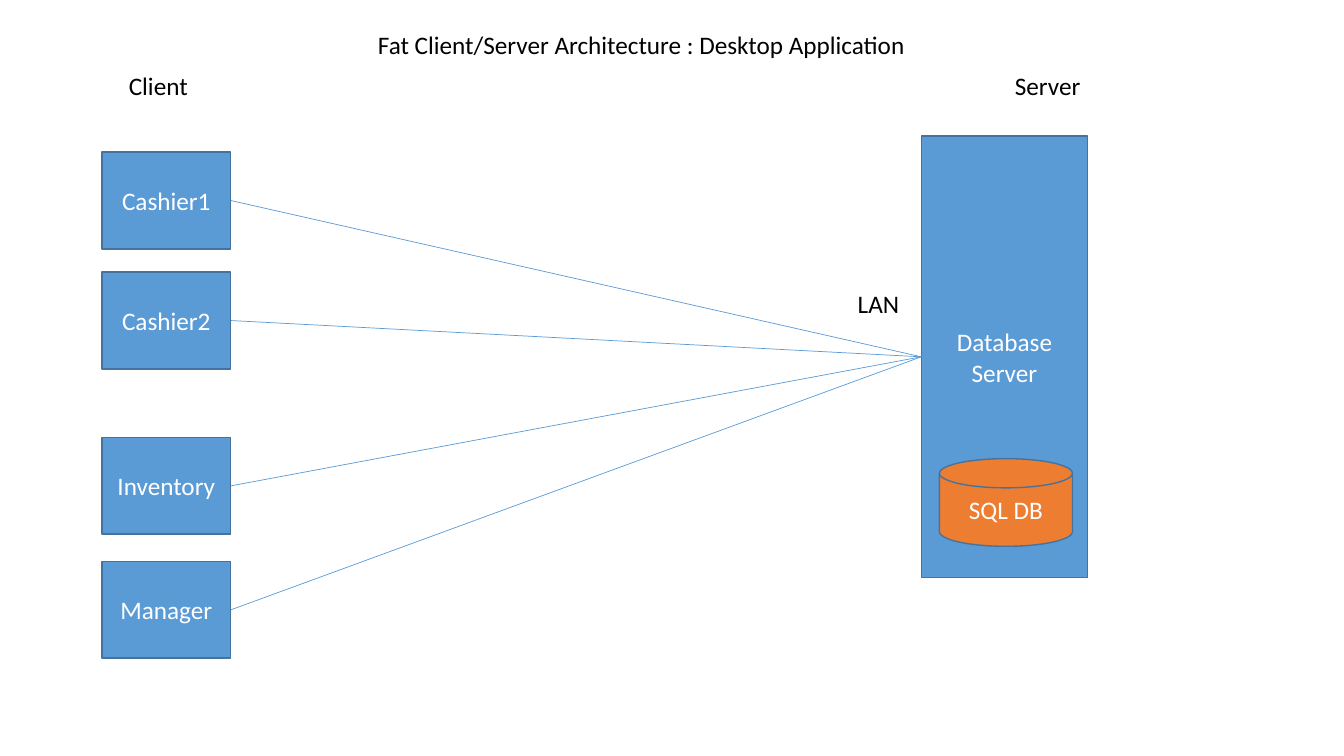
from dataclasses import dataclass

from pptx import Presentation
from pptx import util as u
from pptx.dml.color import RGBColor
from pptx.enum import shapes, text
from pptx.oxml.ns import qn
from lxml import etree


@dataclass(frozen=True)
class Theme:
    font: str = "Calibri"
    size: float = 18
    blue: str = "5B9BD5"
    orange: str = "ED7D31"
    outline: str = "43739E"
    light: str = "FFFFFF"
    dark: str = "000000"
    outline_width: float = 1
    cable_width: float = 0.5


@dataclass(frozen=True)
class Area:
    """Left, top, width and height in percent of the slide's size."""
    left: float
    top: float
    width: float
    height: float


@dataclass(frozen=True)
class Node:
    caption: str
    area: Area
    fill: str
    kind: shapes.MSO_SHAPE = shapes.MSO_SHAPE.RECTANGLE


@dataclass(frozen=True)
class Label:
    caption: str
    area: Area


THEME = Theme()
SLIDE_WIDTH, SLIDE_HEIGHT = u.Inches(13.33), u.Inches(7.5)
LABEL_HEIGHT = 5.33
HEADING_TOP = 8.67
RIGHT_SIDE, LEFT_SIDE = 3, 1

SERVER = Node("Database Server", Area(68.55, 18, 12.38, 58.4), THEME.blue)
DATABASE = Node("SQL DB", Area(69.9, 60.67, 9.9, 11.6), THEME.orange,
                shapes.MSO_SHAPE.FLOWCHART_MAGNETIC_DISK)
CLIENTS = [
    Node(caption, Area(7.58, top, 9.6, 12.8), THEME.blue)
    for caption, top in [("Cashier1", 20.13), ("Cashier2", 36),
                         ("Inventory", 57.87), ("Manager", 74.27)]
]
LABELS = [
    Label("LAN", Area(63.08, 37.47, 4.65, LABEL_HEIGHT)),
    Label("Client", Area(8.85, HEADING_TOP, 5.93, LABEL_HEIGHT)),
    Label("Server", Area(74.78, HEADING_TOP, 6.45, LABEL_HEIGHT)),
    Label("Fat Client/Server Architecture : Desktop Application",
          Area(27.38, 3.2, 41.18, LABEL_HEIGHT)),
]


def place(area: Area) -> tuple[int, int, int, int]:
    return (round(SLIDE_WIDTH * area.left / 100),
            round(SLIDE_HEIGHT * area.top / 100),
            round(SLIDE_WIDTH * area.width / 100),
            round(SLIDE_HEIGHT * area.height / 100))


def write(box, caption: str, *, color: str, align=text.PP_ALIGN.LEFT,
          anchor=text.MSO_ANCHOR.TOP, wrap: bool = True) -> None:
    frame = box.text_frame
    frame.word_wrap = wrap
    frame.vertical_anchor = anchor
    para = frame.paragraphs[0]
    para.alignment = align
    span = para.add_run()
    span.text = caption
    span.font.name = THEME.font
    span.font.size = u.Pt(THEME.size)
    span.font.color.rgb = RGBColor.from_string(color)


def draw_node(page, node: Node):
    box = page.shapes.add_shape(node.kind, *place(node.area))
    box.shadow.inherit = False
    box.fill.solid()
    box.fill.fore_color.rgb = RGBColor.from_string(node.fill)
    box.line.color.rgb = RGBColor.from_string(THEME.outline)
    box.line.width = u.Pt(THEME.outline_width)
    write(box, node.caption, color=THEME.light, align=text.PP_ALIGN.CENTER,
          anchor=text.MSO_ANCHOR.MIDDLE)
    return box


def draw_cable(page, client, server) -> None:
    cable = page.shapes.add_connector(shapes.MSO_CONNECTOR.STRAIGHT, 0, 0, 0, 0)
    cable.begin_connect(client, RIGHT_SIDE)
    cable.end_connect(server, LEFT_SIDE)
    cable.line.color.rgb = RGBColor.from_string(THEME.blue)
    cable.line.width = u.Pt(THEME.cable_width)
    etree.SubElement(cable._element.spPr, qn("a:effectLst"))


def draw_label(page, label: Label) -> None:
    box = page.shapes.add_textbox(*place(label.area))
    write(box, label.caption, color=THEME.dark, wrap=False)
    box.text_frame.auto_size = text.MSO_AUTO_SIZE.SHAPE_TO_FIT_TEXT


def main() -> None:
    deck = Presentation()
    deck.slide_width, deck.slide_height = SLIDE_WIDTH, SLIDE_HEIGHT
    page = deck.slides.add_slide(deck.slide_layouts[6])

    # Server, clients and the network between them
    server = draw_node(page, SERVER)
    clients = [draw_node(page, node) for node in CLIENTS]
    for client in clients:
        draw_cable(page, client, server)

    # Database inside the server
    draw_node(page, DATABASE)

    # Title and headings
    for label in LABELS:
        draw_label(page, label)

    deck.save("out.pptx")


if __name__ == "__main__":
    main()
